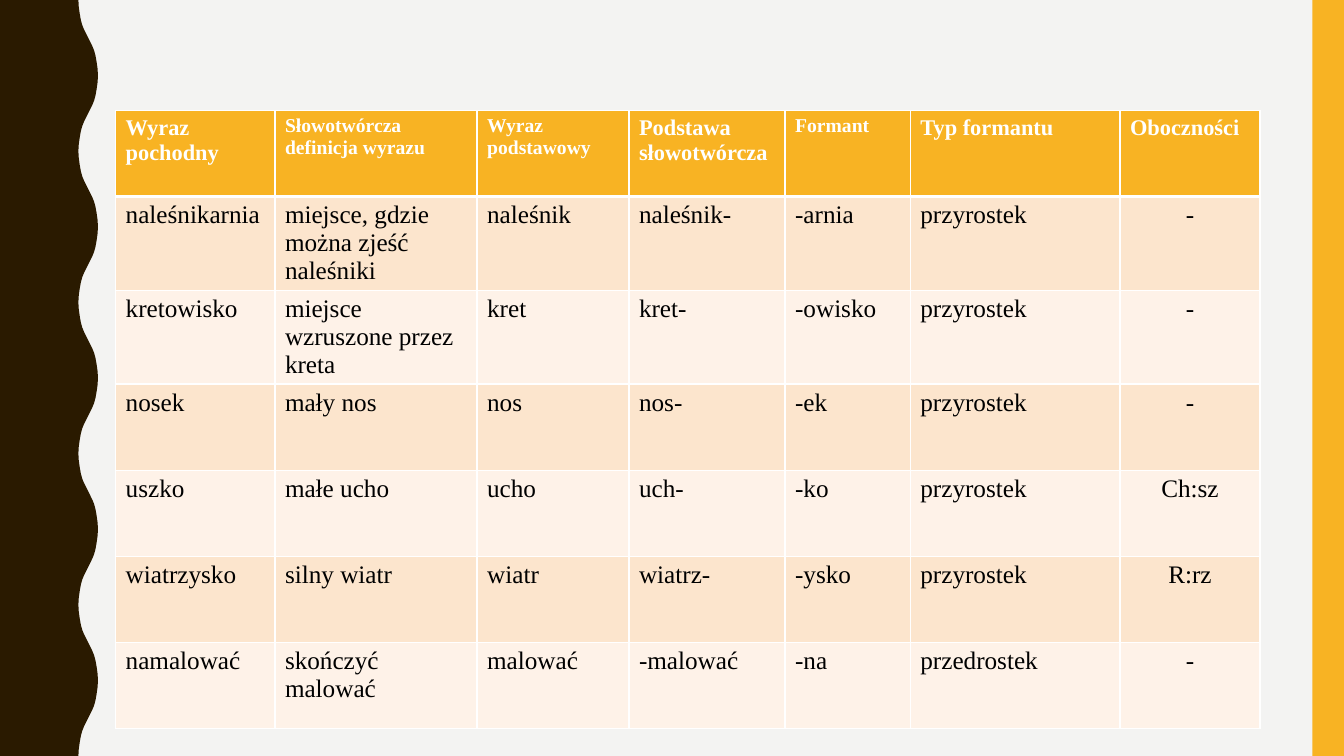
from dataclasses import dataclass

from lxml.etree import SubElement
from pptx import Presentation
from pptx.dml.color import RGBColor as RGB
from pptx.enum.shapes import MSO_SHAPE as SHAPE
from pptx.enum.text import PP_ALIGN as ALIGN
from pptx.oxml.ns import qn
from pptx.util import Pt


@dataclass(frozen=True)
class Theme:
    paper: str = "F3F3F2"
    brown: str = "2A1A00"
    amber: str = "F8B323"
    bands: tuple = ("FCE5CD", "FEF2E8")
    white: str = "FFFFFF"
    ink: str = "000000"
    font: str = "Times New Roman"
    body: int = 18
    heading: int = 16
    small_heading: int = 14


theme = Theme()


def write(frame, text, *, size, color, bold=False, align=ALIGN.LEFT):
    paragraph = frame.paragraphs[0]
    paragraph.alignment = align
    run = paragraph.add_run()
    run.text = text
    run.font.name = theme.font
    run.font.size = Pt(size)
    run.font.bold = bold
    run.font.color.rgb = RGB.from_string(color)


def paint(shape, color):
    """Give a shape a plain fill with no outline or shadow."""
    shape.fill.solid()
    shape.fill.fore_color.rgb = RGB.from_string(color)
    shape.line.fill.background()
    shape.shadow.inherit = False


deck = Presentation()
deck.slide_width, deck.slide_height = Pt(960), Pt(540)
slide = deck.slides.add_slide(deck.slide_layouts[6])
slide.background.fill.solid()
slide.background.fill.fore_color.rgb = RGB.from_string(theme.paper)

# Wavy left edge: each 108 pt wave swells to its crest, then mirrors back
WAVE = 108
swell = [(56, 0), (56.3, 5), (57, 10), (57.8, 14.4), (58.8, 18), (60, 21),
         (61.5, 24), (63, 27), (64.5, 30), (66, 33), (67.2, 36),
         (68.2, 39.6), (69, 44), (69.7, 49), (70, 54)]
wave = swell + [(x, WAVE - y) for x, y in reversed(swell[:-1])]
edge = [(x, y + WAVE * turn) for turn in range(5) for x, y in wave]
outline = slide.shapes.build_freeform(0, 0, scale=1.0)
outline.add_line_segments([(Pt(x), Pt(y)) for x, y in edge + [(0, 540)]])
paint(outline.convert_to_shape(), theme.brown)

right_bar = slide.shapes.add_shape(SHAPE.RECTANGLE, Pt(937.5), 0, Pt(22.5), Pt(540))
paint(right_bar, theme.amber)

# Word-formation table
headings = [
    ("Wyraz pochodny", theme.heading),
    ("Słowotwórcza definicja wyrazu", theme.small_heading),
    ("Wyraz podstawowy", theme.small_heading),
    ("Podstawa słowotwórcza", theme.heading),
    ("Formant", theme.small_heading),
    ("Typ formantu", theme.heading),
    ("Oboczności", theme.heading),
]
words = [
    ("naleśnikarnia", "miejsce, gdzie można zjeść naleśniki", "naleśnik",
     "naleśnik-", "-arnia", "przyrostek", "-"),
    ("kretowisko", "miejsce wzruszone przez kreta", "kret",
     "kret-", "-owisko", "przyrostek", "-"),
    ("nosek", "mały nos", "nos", "nos-", "-ek", "przyrostek", "-"),
    ("uszko", "małe ucho", "ucho", "uch-", "-ko", "przyrostek", "Ch:sz"),
    ("wiatrzysko", "silny wiatr", "wiatr", "wiatrz-", "-ysko", "przyrostek", "R:rz"),
    ("namalować", "skończyć malować", "malować", "-malować", "-na", "przedrostek", "-"),
]
widths = [113.8, 144.4, 108.5, 111.5, 89.5, 149.8, 100]
ROW_HEIGHT = 61.5
row_count = len(words) + 1

table = slide.shapes.add_table(
    row_count, len(widths), Pt(82.6), Pt(78.8),
    Pt(sum(widths)), Pt(ROW_HEIGHT * row_count)).table
for column, width in zip(table.columns, widths):
    column.width = Pt(width)
for row in table.rows:
    row.height = Pt(ROW_HEIGHT)

for r in range(row_count):
    for c in range(len(widths)):
        cell = table.cell(r, c)
        if r == 0:
            text, size = headings[c]
            fill = theme.amber
            write(cell.text_frame, text, size=size, color=theme.white, bold=True)
        else:
            fill = theme.bands[(r - 1) % 2]
            align = ALIGN.CENTER if c == len(widths) - 1 else ALIGN.LEFT
            write(cell.text_frame, words[r - 1][c], size=theme.body,
                  color=theme.ink, align=align)

        properties = cell._tc.get_or_add_tcPr()
        for side in ("L", "R", "T", "B"):
            under_heading = (r, side) in ((0, "B"), (1, "T"))
            border = SubElement(properties, qn(f"a:ln{side}"),
                                w=str(Pt(3 if under_heading else 1)))
            SubElement(SubElement(border, qn("a:solidFill")),
                       qn("a:srgbClr"), val=theme.white)
        cell.fill.solid()
        cell.fill.fore_color.rgb = RGB.from_string(fill)

deck.save("out.pptx")
